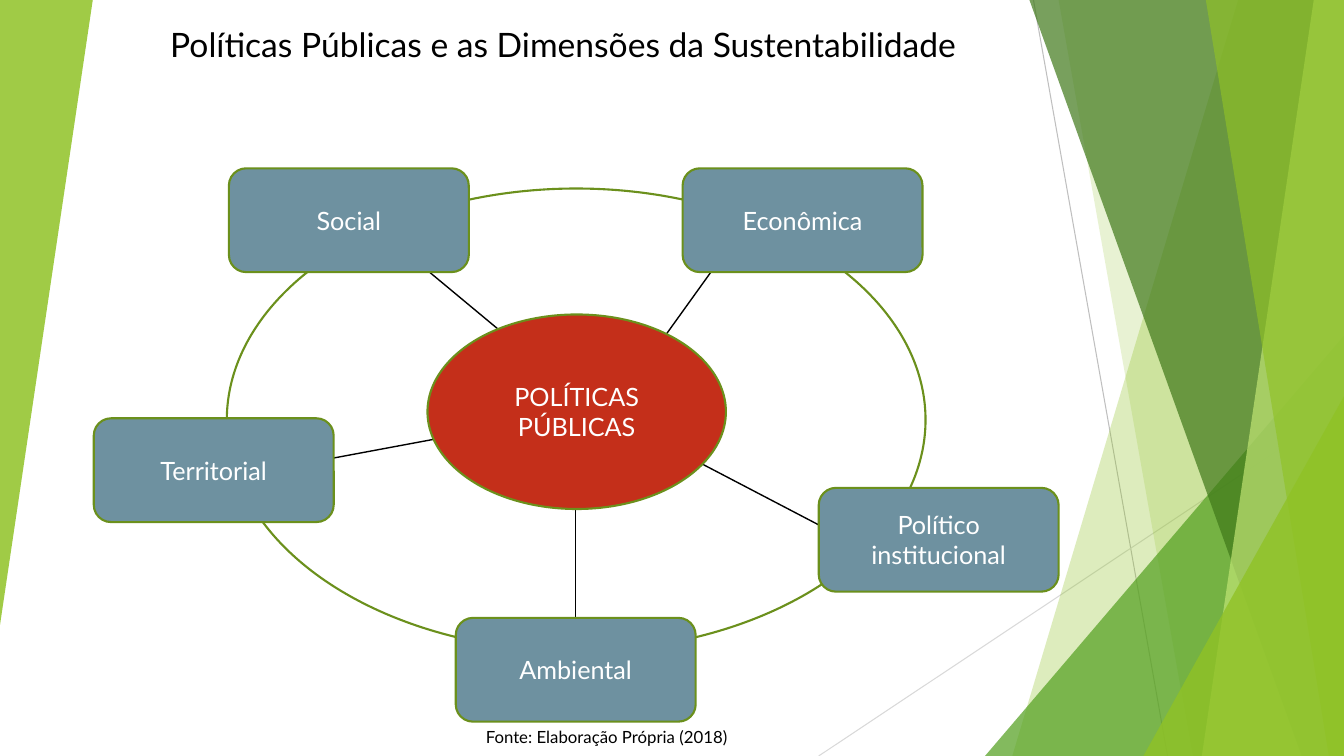
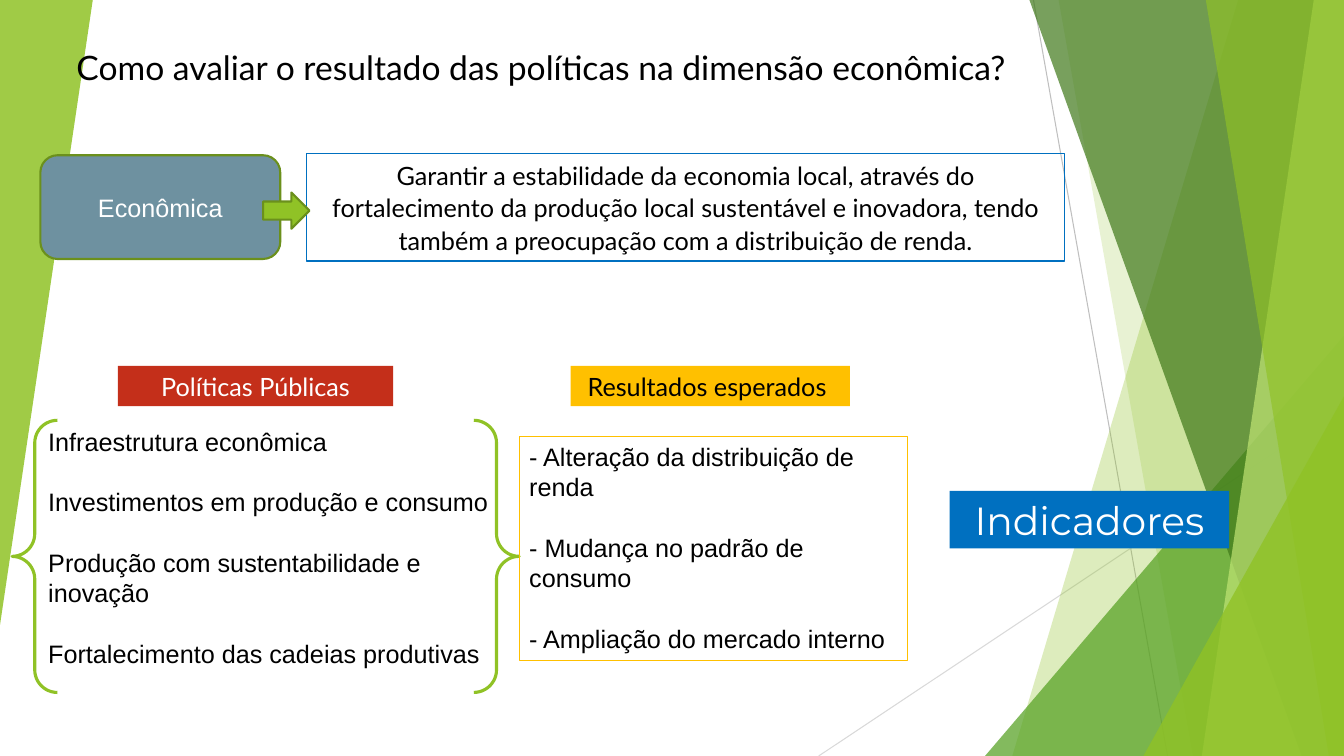
from lxml import etree
from pptx import Presentation
from pptx.dml.color import RGBColor
from pptx.enum.shapes import MSO_CONNECTOR, MSO_SHAPE
from pptx.enum.text import MSO_ANCHOR, PP_ALIGN
from pptx.oxml.ns import qn
from pptx.util import Pt

SCALE = 9144  # EMU per px, 100 px to the inch
WIDTH, HEIGHT = 1333, 750
RECT, ROUND, OVAL = MSO_SHAPE.RECTANGLE, MSO_SHAPE.ROUNDED_RECTANGLE, MSO_SHAPE.OVAL
TRIANGLE, BRACES, ARROW = MSO_SHAPE.ISOSCELES_TRIANGLE, MSO_SHAPE.LEFT_BRACE, MSO_SHAPE.RIGHT_ARROW
BRACES = MSO_SHAPE.DOUBLE_BRACE
STRAIGHT = MSO_CONNECTOR.STRAIGHT
LEFT, CENTER = PP_ALIGN.LEFT, PP_ALIGN.CENTER
TOP, MIDDLE = MSO_ANCHOR.TOP, MSO_ANCHOR.MIDDLE

COLORS = {
    "black": "000000", "white": "FFFFFF", "gray": "BFBFBF", "pale": "D9D9D9",
    "green": "90C226", "leaf": "54A021", "forest": "3F7819", "lime": "C0E474",
    "outline": "6B901C", "slate": "6E91A0", "red": "C42F1A", "amber": "FFC000",
    "blue": "0070C0",
}
BODY, LIST, DISPLAY = "Lato", "Arial", "Montserrat"
NODE_SIZE = (238, 103)
LABEL_HEIGHT = 40
LIST_LEADING = Pt(21.6)


def px(value):
    return value * SCALE


def rgb(name):
    return RGBColor.from_string(COLORS[name])


def paint(shape, fill=None, line=None, weight=1.5, opacity=100):
    shape.shadow.inherit = False
    if fill:
        shape.fill.solid()
        shape.fill.fore_color.rgb = rgb(fill)
    else:
        shape.fill.background()
    if opacity < 100:
        color = shape.element.spPr.find(qn("a:solidFill"))[0]
        etree.SubElement(color, qn("a:alpha")).set("val", str(opacity * 1000))
    if line:
        shape.line.color.rgb = rgb(line)
        shape.line.width = Pt(weight)
    else:
        shape.line.fill.background()


def write(shape, lines, size=18, font=BODY, color="white", align=CENTER, anchor=TOP):
    frame = shape.text_frame
    frame.word_wrap = True
    frame.vertical_anchor = anchor
    frame.text = "\n".join(lines)
    for para in frame.paragraphs:
        para.alignment = align
        para.font.size = Pt(size)
        para.font.name = font
        para.font.color.rgb = rgb(color)
    return frame.paragraphs


def add_box(page, kind, box, **style):
    shape = page.shapes.add_shape(kind, *map(px, box))
    paint(shape, **style)
    return shape


def add_text(page, box, text, **style):
    write(page.shapes.add_textbox(*map(px, box)), [text], color="black", align=LEFT, **style)


def add_line(page, start, end, color, weight):
    line = page.shapes.add_connector(STRAIGHT, *map(px, start + end))
    line.line.color.rgb = rgb(color)
    line.line.width = Pt(weight)
    etree.SubElement(line.element.spPr, qn("a:effectLst"))


def add_node(page, left, top, name, font=BODY):
    node = add_box(page, ROUND, (left, top, *NODE_SIZE), fill="slate", line="outline")
    write(node, [name], font=font, anchor=MIDDLE)


def add_label(page, left, top, width, text, fill, color="white"):
    label = add_box(page, RECT, (left, top, width, LABEL_HEIGHT), fill=fill)
    write(label, [text], color=color)


def add_list(shape, lines):
    for para in write(shape, lines, font=LIST, color="black", align=LEFT):
        para.line_spacing = LIST_LEADING
        para.space_after = LIST_LEADING


# Shared background
def add_blade(page, upper, lower, right, color, opacity):
    """Band running from a point on the top edge to one on the bottom edge."""
    builder = page.shapes.build_freeform(px(upper), 0)
    corners = [(right, 0), (right, HEIGHT), (lower, HEIGHT)]
    builder.add_line_segments([(px(x), px(y)) for x, y in corners])
    paint(builder.convert_to_shape(), fill=color, opacity=opacity)


def add_wedge(page, box, color, opacity, rotation=0):
    wedge = add_box(page, TRIANGLE, box, fill=color, opacity=opacity)
    wedge.adjustments[0] = 1
    wedge.rotation = rotation


def add_background(page):
    add_line(page, (1025, 0), (1158, HEIGHT), "gray", 0.75)
    add_line(page, (WIDTH, 403), (812, HEIGHT), "pale", 0.75)
    add_blade(page, 1228, 1004, WIDTH, "green", 30)
    add_blade(page, 1050, 1183, WIDTH, "green", 20)
    add_wedge(page, (977, 333, 356, 417), "leaf", 72)
    add_blade(page, 1021, 1291, WIDTH, "forest", 70)
    add_blade(page, 1303, 1192, WIDTH, "lime", 70)
    add_blade(page, 1196, 1318, WIDTH, "green", 65)
    add_wedge(page, (1134, 393, 199, 357), "green", 80)
    add_wedge(page, (0, 0, 92, 620), "green", 85, rotation=180)


def add_page(deck, title, box):
    page = deck.slides.add_slide(deck.slide_layouts[6])
    add_background(page)
    add_text(page, box, title, size=24)
    return page


# Hub with five dimensions on a ring
def add_wheel(page, left, top):
    nodes = [  # name, node corner, spoke start, spoke end
        ("Econômica", (584, 0), (630, 78), (551, 188)),
        ("Social", (134, 0), (321, 93), (410, 167)),
        ("Territorial", (0, 248), (224, 290), (358, 265)),
        ("Ambiental", (359, 446), (478, 335), (478, 466)),
        ("Político institucional", (719, 317), (597, 290), (731, 360)),
    ]

    def at(point):
        return left + point[0], top + point[1]

    add_box(page, OVAL, (*at((132, 20)), 693, 459), line="outline")
    for _, _, start, end in nodes:
        add_line(page, at(start), at(end), "black", 1)
    for name, corner, _, _ in nodes:
        add_node(page, *at(corner), name)
    hub = add_box(page, OVAL, (*at((331, 145)), 296, 193), fill="red", line="outline")
    write(hub, ["POLÍTICAS PÚBLICAS"], anchor=MIDDLE)


# Dimension with an arrow to its objective
def add_objective(page, left, top):
    add_node(page, left, top + 2, "Econômica", font=LIST)
    goal = add_box(page, RECT, (left + 264, top, 752, 107), line="blue", weight=0.75)
    text = ("Garantir a estabilidade da economia local, através do fortalecimento da "
            "produção local sustentável e inovadora, tendo também a preocupação com a "
            "distribuição de renda.")
    for para in write(goal, [text], color="black"):
        para.line_spacing = 1.07
    add_box(page, ARROW, (left + 221, top + 39, 46, 36), fill="green", line="outline")


# Policies inside braces
def add_policies(page, left, top):
    add_label(page, left + 105, top, 273, "Políticas Públicas", "red")
    add_box(page, BRACES, (left, top + 54, 503, 270), line="green", weight=2.25)
    box = (left + 26, top + 55, 482, 252)
    add_list(page.shapes.add_textbox(*map(px, box)), [
        "Infraestrutura econômica",
        "Investimentos em produção e consumo",
        "Produção com sustentabilidade e inovação",
        "Fortalecimento das cadeias produtivas",
    ])


# Expected results in a frame
def add_results(page, left, top):
    add_label(page, left + 51, top, 277, "Resultados esperados ", "amber", "black")
    frame = add_box(page, RECT, (left, top + 70, 385, 222), line="amber", weight=0.75)
    add_list(frame, [
        "- Alteração da distribuição de renda",
        "- Mudança no padrão de consumo",
        "- Ampliação do mercado interno",
    ])


def build_dimensions(deck):
    page = add_page(deck, "Políticas Públicas e as Dimensões da Sustentabilidade",
                    (159, 19, 847, 50))
    add_wheel(page, 93, 167)
    add_text(page, (472, 716, 290, 30), "Fonte: Elaboração Própria (2018)", size=12)


def build_evaluation(deck):
    page = add_page(deck, "Como avaliar o resultado das políticas na dimensão econômica?",
                    (66, 42, 978, 50))
    add_objective(page, 40, 152)
    add_policies(page, 12, 363)
    add_results(page, 515, 363)
    banner = add_box(page, RECT, (942, 487, 277, 57), fill="blue")
    write(banner, ["Indicadores"], size=28, font=DISPLAY)


def main():
    deck = Presentation()
    deck.slide_width, deck.slide_height = px(WIDTH), px(HEIGHT)
    build_dimensions(deck)
    build_evaluation(deck)
    deck.save("out.pptx")


if __name__ == "__main__":
    main()
